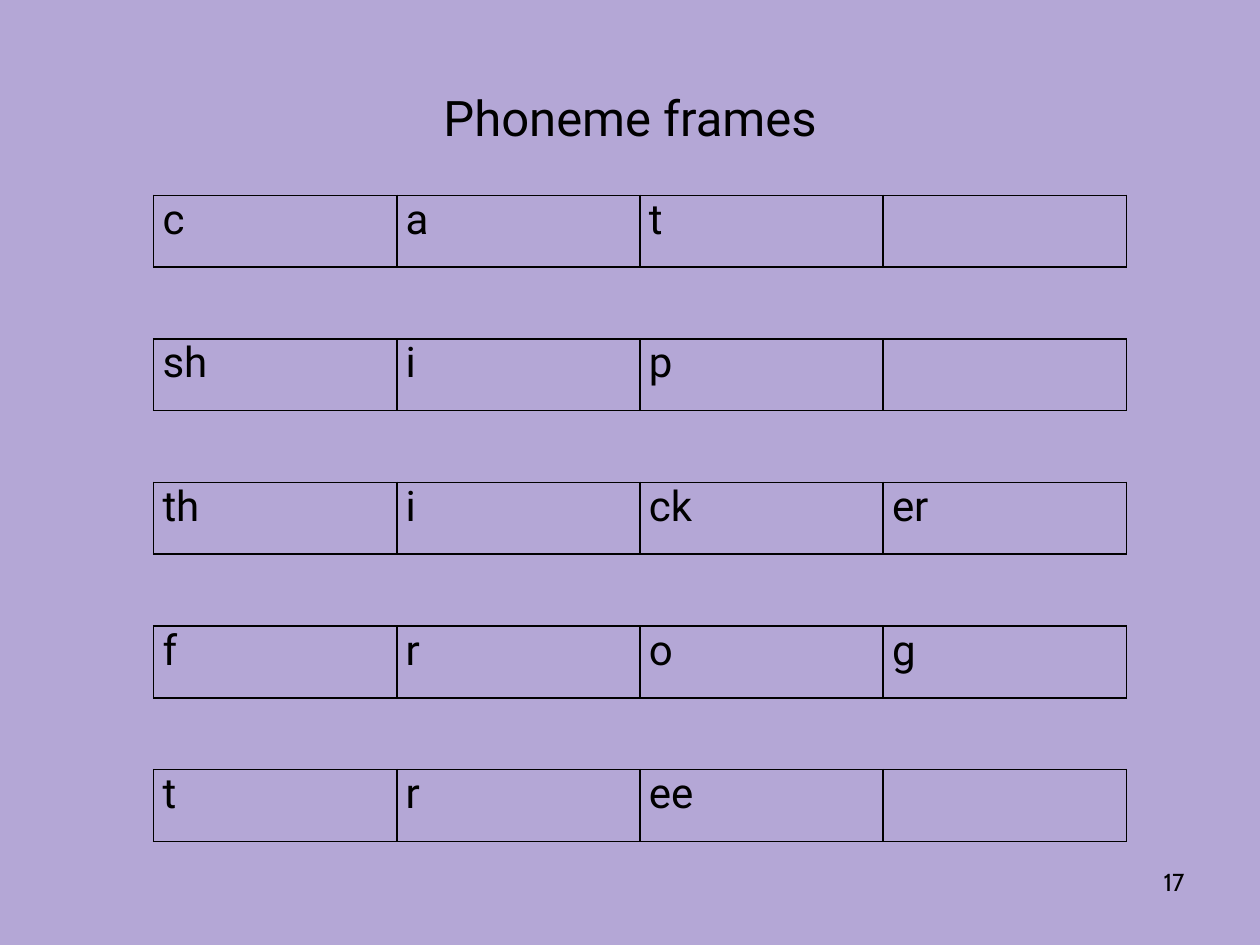
from lxml import etree
from pptx import Presentation
from pptx.dml.color import RGBColor
from pptx.enum.text import MSO_ANCHOR, PP_ALIGN
from pptx.oxml.ns import qn
from pptx.util import Inches, Pt

CENTER, RIGHT = PP_ALIGN.CENTER, PP_ALIGN.RIGHT
MIDDLE = MSO_ANCHOR.MIDDLE
COLORS = {"back": "B4A7D6", "ink": "000000"}
WORDS = [
    ["c", "a", "t"],
    ["sh", "i", "p"],
    ["th", "i", "ck", "er"],
    ["f", "r", "o", "g"],
    ["t", "r", "ee"],
]
SOUNDS = 4


def write(frame, text, size, face="Roboto", align=None):
    frame.text = text
    para = frame.paragraphs[0]
    para.alignment = align
    font = para.runs[0].font
    font.size, font.name = Pt(size), face
    font.color.rgb = RGBColor.from_string(COLORS["ink"])


def set_edges(cell, shown):
    """Draw the sides named in shown (from L, R, T, B) and clear the others."""
    props = cell._tc.get_or_add_tcPr()
    for side in "LRTB":
        line = etree.SubElement(props, qn(f"a:ln{side}"), w=str(Pt(1)))
        if side in shown:
            fill = etree.SubElement(line, qn("a:solidFill"))
            etree.SubElement(fill, qn("a:srgbClr"), val=COLORS["ink"])
        else:
            etree.SubElement(line, qn("a:noFill"))


def add_title(slide, left, top, width, height):
    title = slide.shapes.title
    title.left, title.top, title.width, title.height = left, top, width, height
    title.text_frame.vertical_anchor = MIDDLE
    write(title.text_frame, "Phoneme frames", 28, align=CENTER)


def add_frames(slide, left, top, width, height):
    """Put each word in a row of sound boxes, with an open row between words."""
    count = 2 * len(WORDS) - 1
    table = slide.shapes.add_table(count, SOUNDS, left, top, width, height).table
    table.first_row = table.horz_banding = False
    for row in range(count):
        is_gap = row % 2 == 1
        for col in range(SOUNDS):
            cell = table.cell(row, col)
            set_edges(cell, "TB" if is_gap else "LRTB")
            cell.fill.background()
            cell.margin_left = cell.margin_right = Inches(0.07)
            cell.margin_top = cell.margin_bottom = 0
            if not is_gap and col < len(WORDS[row // 2]):
                write(cell.text_frame, WORDS[row // 2][col], 24)
        if is_gap:
            table.cell(row, 0).merge(table.cell(row, SOUNDS - 1))


def add_number(slide, left, top, width, height):
    frame = slide.shapes.add_textbox(left, top, width, height).text_frame
    frame.word_wrap = True
    write(frame, "17", 14, "Cabin", RIGHT)


def main():
    deck = Presentation()
    deck.slide_width, deck.slide_height = Inches(10), Inches(7.5)
    slide = deck.slides.add_slide(deck.slide_layouts[5])
    back = slide.background.fill
    back.solid()
    back.fore_color.rgb = RGBColor.from_string(COLORS["back"])
    add_title(slide, Inches(0.5), Inches(0.3), Inches(9), Inches(1.25))
    add_frames(slide, Inches(1.22), Inches(1.55), Inches(7.72), Inches(5.13))
    add_number(slide, Inches(7.17), Inches(6.83), Inches(2.33), Inches(0.5))
    deck.save("out.pptx")


if __name__ == "__main__":
    main()
